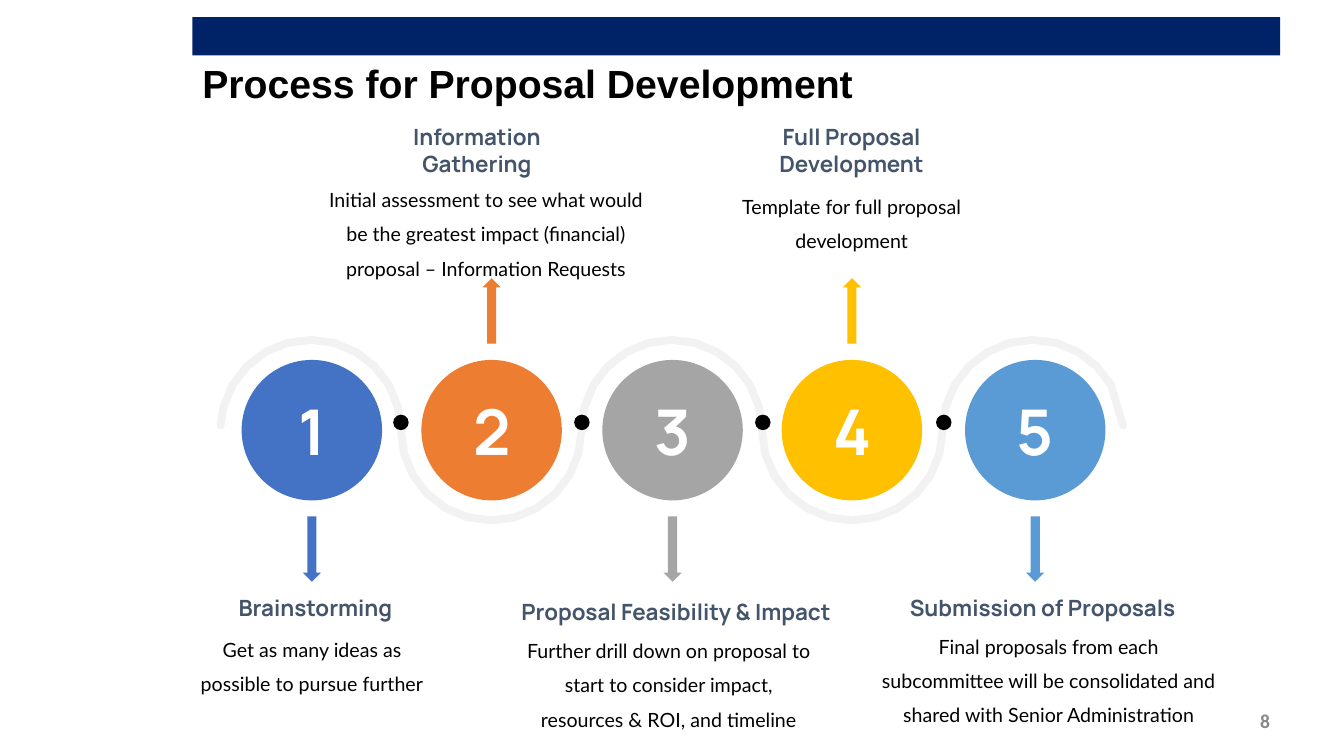
"""Build the five-step proposal development process slide."""
from math import cos, radians, sin

from pptx import Presentation
from pptx.dml.color import RGBColor
from pptx.enum.shapes import MSO_SHAPE
from pptx.enum.text import MSO_ANCHOR, PP_ALIGN
from pptx.util import Cm, Pt

NAVY = RGBColor(0x00, 0x23, 0x68)
SLATE = RGBColor(0x44, 0x54, 0x6A)
BLACK = RGBColor(0x00, 0x00, 0x00)
WHITE = RGBColor(0xFF, 0xFF, 0xFF)
GRAY = RGBColor(0x88, 0x88, 0x88)
PALE = RGBColor(0xF2, 0xF2, 0xF2)
BLUE = RGBColor(0x44, 0x72, 0xC4)
ORANGE = RGBColor(0xED, 0x7D, 0x31)
SILVER = RGBColor(0xA5, 0xA5, 0xA5)
GOLD = RGBColor(0xFF, 0xC0, 0x00)
SKY = RGBColor(0x5B, 0x9B, 0xD5)


def paint(sp, color):
    sp.shadow.inherit = False
    sp.fill.solid()
    sp.fill.fore_color.rgb = color
    sp.line.fill.background()


def write(sp, text, font, size, color, bold=True, align=PP_ALIGN.CENTER,
          anchor=MSO_ANCHOR.MIDDLE, pad=(0.25, 0.13), spacing=None):
    tf = sp.text_frame
    tf.word_wrap = True
    tf.vertical_anchor = anchor
    tf.margin_left = tf.margin_right = Cm(pad[0])
    tf.margin_top = tf.margin_bottom = Cm(pad[1])
    p = tf.paragraphs[0]
    p.text = text
    p.alignment = align
    p.line_spacing = spacing
    p.font.name, p.font.size, p.font.bold = font, Pt(size), bold
    p.font.color.rgb = color


prs = Presentation()
prs.slide_width, prs.slide_height = Cm(33.87), Cm(19.05)
s = prs.slides.add_slide(prs.slide_layouts[5])
shapes = s.shapes

paint(shapes.add_shape(MSO_SHAPE.RECTANGLE, Cm(4.85), Cm(0.43), Cm(27.41), Cm(0.97)), NAVY)
title = shapes.title
title.left, title.top, title.width, title.height = Cm(4.85), Cm(1.38), Cm(27.43), Cm(1.4)
write(title, "Process for Proposal Development", "Arial", 28, BLACK,
      align=PP_ALIGN.LEFT, pad=(0.25, 0))
number = shapes.add_textbox(Cm(24.64), Cm(17.65), Cm(7.62), Cm(1.02))
write(number, "8", "Calibri", 14, GRAY, align=PP_ALIGN.RIGHT)

WAVE_X, WAVE_Y, PITCH, HALF = 7.83, 10.84, 4.55, 0.1
RADIUS = PITCH / 2
edges = []
for side in (1, -1):
    edge = []
    for i in range(5):
        up = -1 if i % 2 else 1
        r = RADIUS + side * up * HALF
        first = 177 if i == 0 else 180
        last = 3 if i == 4 else 15
        for a in [first, *range(165, 15, -15), last]:
            edge.append((WAVE_X + i * PITCH + r * cos(radians(a)),
                         WAVE_Y - up * r * sin(radians(a))))
    edges.append(edge)
right_tip, left_tip = [
    [(x + HALF * cos(radians(a)), WAVE_Y - 0.12 + HALF * sin(radians(a)))
     for a in (45, 90, 135)]
    for x in (WAVE_X + 4 * PITCH + RADIUS, WAVE_X - RADIUS)]
outline = edges[0] + right_tip + edges[1][::-1] + left_tip
points = [(Cm(x), Cm(y)) for x, y in outline]
wave = shapes.build_freeform(*points[0])
wave.add_line_segments(points[1:], close=True)
paint(wave.convert_to_shape(), PALE)

steps = [
    (7.86, BLUE, "Brainstorming", (5.36, 14.81, 5.18, 0.96),
     "Get as many ideas as possible to pursue further", (4.88, 15.75, 5.97, 1.88)),
    (12.39, ORANGE, "Information Gathering", (8.77, 3.65, 6.5, 0.94),
     "Initial assessment to see what would be the greatest impact (financial) "
     "proposal – Information Requests", (8.06, 4.41, 8.38, 2.74)),
    (16.95, SILVER, "Proposal Feasibility & Impact", (12.34, 14.94, 9.4, 0.94),
     "Further drill down on proposal to start to consider impact, "
     "resources & ROI, and timeline", (13.11, 15.78, 7.49, 2.74)),
    (21.47, GOLD, "Full Proposal Development", (17.61, 3.65, 7.7, 0.94),
     "Template for full proposal development", (18.48, 4.58, 5.97, 1.88)),
    (26.09, SKY, "Submission of Proposals", (21.97, 14.83, 8.61, 0.94),
     "Final proposals from each subcommittee will be consolidated and "
     "shared with Senior Administration", (22, 15.67, 8.86, 2.74)),
]
for i, (x, color, heading, head_box, body, body_box) in enumerate(steps):
    paint(shapes.add_shape(MSO_SHAPE.OVAL, Cm(x - 1.77), Cm(9.07), Cm(3.54), Cm(3.54)), color)
    digit = shapes.add_textbox(Cm(x - 0.71), Cm(9.75), Cm(1.42), Cm(2.18))
    write(digit, str(i + 1), "Manrope", 45, WHITE)
    kind, top = (MSO_SHAPE.UP_ARROW, 7.01) if i % 2 else (MSO_SHAPE.DOWN_ARROW, 13.01)
    paint(shapes.add_shape(kind, Cm(x - 0.23), Cm(top), Cm(0.46), Cm(1.65)), color)
    write(shapes.add_textbox(*map(Cm, body_box)), body, "Lato", 14, BLACK, bold=False,
          anchor=MSO_ANCHOR.TOP, pad=(0.13, 0.05), spacing=1.46)
    write(shapes.add_textbox(*map(Cm, head_box)), heading, "Manrope", 16, SLATE,
          anchor=MSO_ANCHOR.BOTTOM)

for i in range(4):
    paint(shapes.add_shape(MSO_SHAPE.OVAL, Cm(9.91 + i * 4.56), Cm(10.45), Cm(0.39), Cm(0.39)), BLACK)

prs.save("out.pptx")
